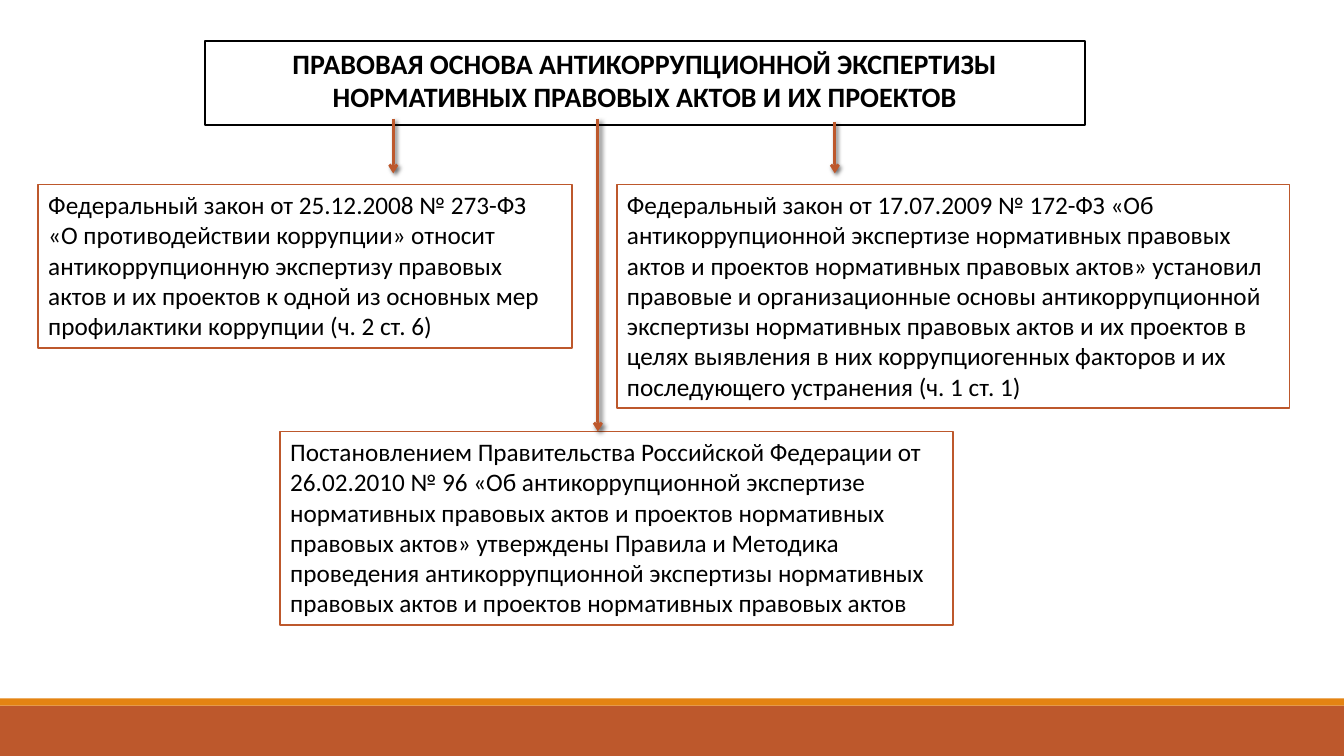
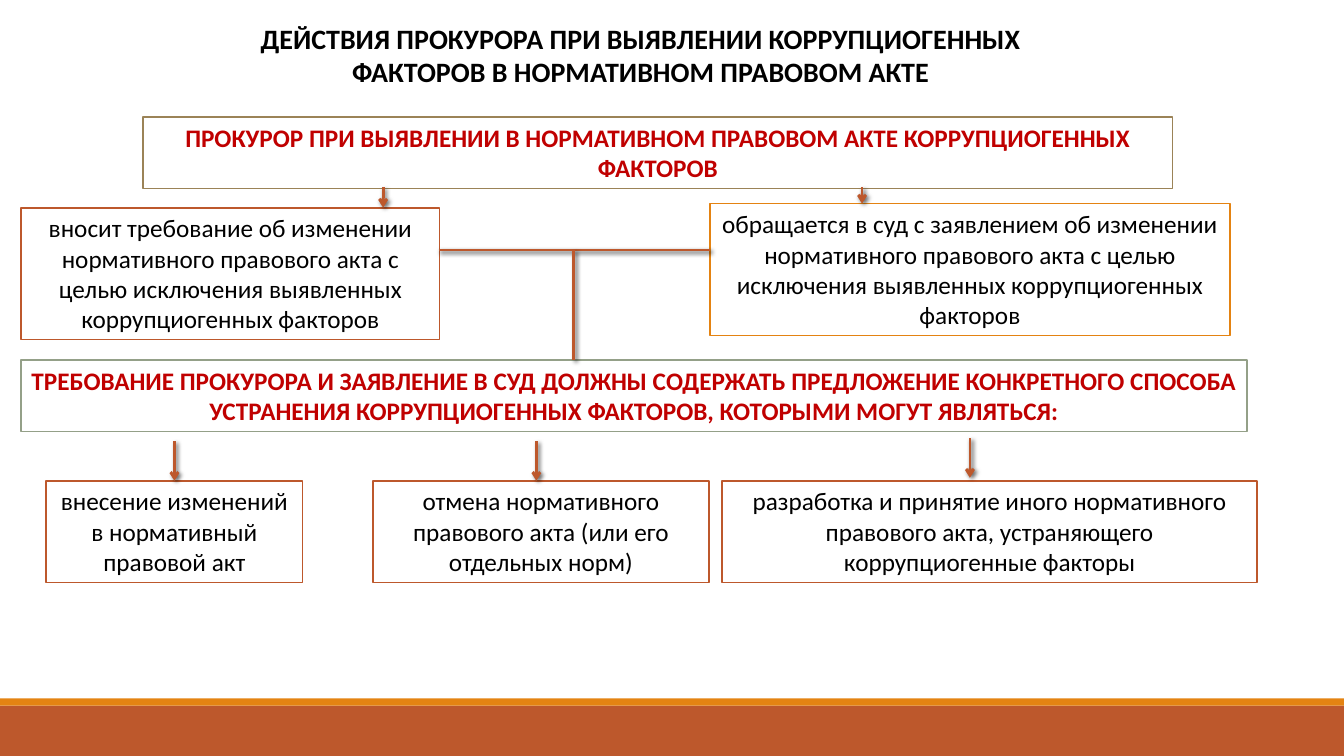
from dataclasses import dataclass

from lxml.etree import SubElement
from pptx import Presentation
from pptx.dml.color import RGBColor
from pptx.enum.shapes import MSO_CONNECTOR, MSO_SHAPE
from pptx.enum.text import MSO_ANCHOR, MSO_AUTO_SIZE, PP_ALIGN
from pptx.oxml.ns import qn
from pptx.presentation import Presentation as PresentationType
from pptx.slide import Slide
from pptx.text.text import TextFrame
from pptx.util import Inches, Pt

BLACK = RGBColor(0x00, 0x00, 0x00)
WHITE = RGBColor(0xFF, 0xFF, 0xFF)
RUST = RGBColor(0xBD, 0x58, 0x2C)
ORANGE = RGBColor(0xE4, 0x83, 0x12)
OLIVE = RGBColor(0x9B, 0x83, 0x57)
SAGE = RGBColor(0x94, 0xA0, 0x88)
RED = RGBColor(0xC0, 0x00, 0x00)

FONT = "Calibri"
SLIDE_WIDTH, SLIDE_HEIGHT = 13.33, 7.5
TITLE_ONLY_LAYOUT = 5
BORDER = Pt(1.25)


@dataclass(frozen=True)
class Band:
    top: float
    height: float
    color: RGBColor


@dataclass(frozen=True)
class Box:
    text: str
    left: float
    top: float
    width: float
    height: float
    border: RGBColor = RUST
    align: PP_ALIGN = PP_ALIGN.CENTER
    color: RGBColor = BLACK
    bold: bool = False


@dataclass(frozen=True)
class Link:
    start: tuple[float, float]
    end: tuple[float, float]
    arrow: bool = True


def down(x: float, top: float, bottom: float, arrow: bool = True) -> Link:
    return Link((x, top), (x, bottom), arrow)


BANDS = (Band(7, 0.5, RUST), Band(6.93, 0.07, ORANGE))

LAW_BOXES = (
    Box("Федеральный закон от 25.12.2008 № 273-ФЗ «О противодействии коррупции» относит "
        "антикоррупционную экспертизу правовых актов и их проектов к одной из основных мер "
        "профилактики коррупции (ч. 2 ст. 6)",
        0.38, 1.83, 5.29, 1.62, align=PP_ALIGN.LEFT),
    Box("Федеральный закон от 17.07.2009 № 172-ФЗ «Об антикоррупционной экспертизе "
        "нормативных правовых актов и проектов нормативных правовых актов» установил "
        "правовые и организационные основы антикоррупционной экспертизы нормативных "
        "правовых актов и их проектов в целях выявления в них коррупциогенных факторов "
        "и их последующего устранения (ч. 1 ст. 1)",
        6.12, 1.83, 6.67, 2.22, align=PP_ALIGN.LEFT),
    Box("Постановлением Правительства Российской Федерации от 26.02.2010 № 96 "
        "«Об антикоррупционной экспертизе нормативных правовых актов и проектов "
        "нормативных правовых актов» утверждены Правила и Методика проведения "
        "антикоррупционной экспертизы нормативных правовых актов и проектов "
        "нормативных правовых актов",
        2.78, 4.28, 6.67, 1.92, align=PP_ALIGN.LEFT),
)
LAW_LINKS = (down(3.9, 1.18, 1.72), down(5.93, 1.18, 4.28), down(8.28, 1.21, 1.72))

ACTION_BOXES = (
    Box("ПРОКУРОР ПРИ ВЫЯВЛЕНИИ В НОРМАТИВНОМ ПРАВОВОМ АКТЕ КОРРУПЦИОГЕННЫХ ФАКТОРОВ",
        1.42, 1.16, 10.21, 0.71, border=OLIVE, color=RED, bold=True),
    Box("вносит требование об изменении нормативного правового акта с целью исключения "
        "выявленных коррупциогенных факторов", 0.21, 2.06, 4.15, 1.31),
    Box("обращается в суд с заявлением об изменении нормативного правового акта с целью "
        "исключения выявленных коррупциогенных факторов",
        7.04, 2.02, 5.16, 1.31, border=ORANGE),
    Box("ТРЕБОВАНИЕ ПРОКУРОРА И ЗАЯВЛЕНИЕ В СУД ДОЛЖНЫ СОДЕРЖАТЬ ПРЕДЛОЖЕНИЕ КОНКРЕТНОГО "
        "СПОСОБА УСТРАНЕНИЯ КОРРУПЦИОГЕННЫХ ФАКТОРОВ, КОТОРЫМИ МОГУТ ЯВЛЯТЬСЯ:",
        0.21, 3.57, 12.16, 0.71, border=SAGE, color=RED, bold=True),
    Box("внесение изменений в нормативный правовой акт", 0.46, 4.77, 2.54, 1.01),
    Box("отмена нормативного правового акта (или его отдельных норм)",
        3.7, 4.77, 3.33, 1.01),
    Box("разработка и принятие иного нормативного правового акта, устраняющего "
        "коррупциогенные факторы", 7.16, 4.77, 5.31, 1.01),
)
ACTION_LINKS = (
    down(3.8, 1.86, 2.06),
    down(8.55, 1.86, 2.02),
    Link((4.35, 2.48), (7.04, 2.48), arrow=False),
    down(5.69, 2.48, 3.57, arrow=False),
    down(1.73, 4.38, 4.77),
    down(5.32, 4.38, 4.77),
    down(9.62, 4.35, 4.74),
)


def write_text(frame: TextFrame, text: str, *, size: float = 18, color: RGBColor = BLACK,
               bold: bool = False, align: PP_ALIGN = PP_ALIGN.CENTER) -> None:
    frame.word_wrap = True
    frame.auto_size = MSO_AUTO_SIZE.SHAPE_TO_FIT_TEXT
    frame.vertical_anchor = MSO_ANCHOR.TOP
    paragraph = frame.paragraphs[0]
    paragraph.alignment = align
    run = paragraph.add_run()
    run.text = text
    run.font.name = FONT
    run.font.size = Pt(size)
    run.font.bold = bold
    run.font.color.rgb = color


def add_bands(presentation: PresentationType, slide: Slide) -> None:
    """Draw the bottom bands and move them to the slide master."""
    master_tree = presentation.slide_master.shapes.element
    for number, band in enumerate(BANDS):
        shape = slide.shapes.add_shape(
            MSO_SHAPE.RECTANGLE, 0, Inches(band.top), Inches(SLIDE_WIDTH), Inches(band.height))
        shape.shadow.inherit = False
        shape.fill.solid()
        shape.fill.fore_color.rgb = band.color
        shape.line.fill.background()
        shape.element.nvSpPr.cNvPr.set("id", str(100 + number))
        master_tree.insert(2 + number, shape.element)


def set_title(slide: Slide, text: str, left: float, top: float, width: float,
              framed: bool = False) -> None:
    title = slide.shapes.title
    title.left, title.top = Inches(left), Inches(top)
    title.width, title.height = Inches(width), Inches(0.77)
    if framed:
        title.fill.solid()
        title.fill.fore_color.rgb = WHITE
        title.line.color.rgb = BLACK
        title.line.width = BORDER
    write_text(title.text_frame, text, size=20, bold=True)


def add_box(slide: Slide, box: Box) -> None:
    shape = slide.shapes.add_shape(
        MSO_SHAPE.RECTANGLE, Inches(box.left), Inches(box.top),
        Inches(box.width), Inches(box.height))
    shape.shadow.inherit = False
    shape.fill.solid()
    shape.fill.fore_color.rgb = WHITE
    shape.line.color.rgb = box.border
    shape.line.width = BORDER
    write_text(shape.text_frame, box.text, color=box.color, bold=box.bold, align=box.align)


def add_link(slide: Slide, link: Link) -> None:
    """Draw a line with a soft shadow and, if asked, an arrowhead at its end."""
    connector = slide.shapes.add_connector(
        MSO_CONNECTOR.STRAIGHT, *(Inches(value) for value in link.start + link.end))
    connector.line.color.rgb = RUST
    connector.line.width = Pt(2)
    properties = connector.element.spPr
    if link.arrow:
        SubElement(properties.find(qn("a:ln")), qn("a:tailEnd"), type="arrow")
    effects = SubElement(properties, qn("a:effectLst"))
    shadow = SubElement(effects, qn("a:outerShdw"), blurRad=str(Pt(3)), dist=str(Pt(2)),
                        dir=str(45 * 60000), rotWithShape="0")
    shadow_color = SubElement(shadow, qn("a:srgbClr"), val=str(BLACK))
    SubElement(shadow_color, qn("a:alpha"), val="60000")


def add_diagram(slide: Slide, boxes: tuple[Box, ...], links: tuple[Link, ...]) -> None:
    for box in boxes:
        add_box(slide, box)
    for link in links:
        add_link(slide, link)


def main() -> None:
    presentation = Presentation()
    presentation.slide_width = Inches(SLIDE_WIDTH)
    presentation.slide_height = Inches(SLIDE_HEIGHT)
    layout = presentation.slide_layouts[TITLE_ONLY_LAYOUT]

    law_slide = presentation.slides.add_slide(layout)
    add_bands(presentation, law_slide)
    set_title(law_slide, "ПРАВОВАЯ ОСНОВА АНТИКОРРУПЦИОННОЙ ЭКСПЕРТИЗЫ НОРМАТИВНЫХ "
              "ПРАВОВЫХ АКТОВ И ИХ ПРОЕКТОВ", 2.03, 0.41, 8.73, framed=True)
    add_diagram(law_slide, LAW_BOXES, LAW_LINKS)

    action_slide = presentation.slides.add_slide(layout)
    set_title(action_slide, "ДЕЙСТВИЯ ПРОКУРОРА ПРИ ВЫЯВЛЕНИИ КОРРУПЦИОГЕННЫХ ФАКТОРОВ "
              "В НОРМАТИВНОМ ПРАВОВОМ АКТЕ", 2.08, 0.16, 8.55)
    add_diagram(action_slide, ACTION_BOXES, ACTION_LINKS)

    presentation.save("out.pptx")


if __name__ == "__main__":
    main()
